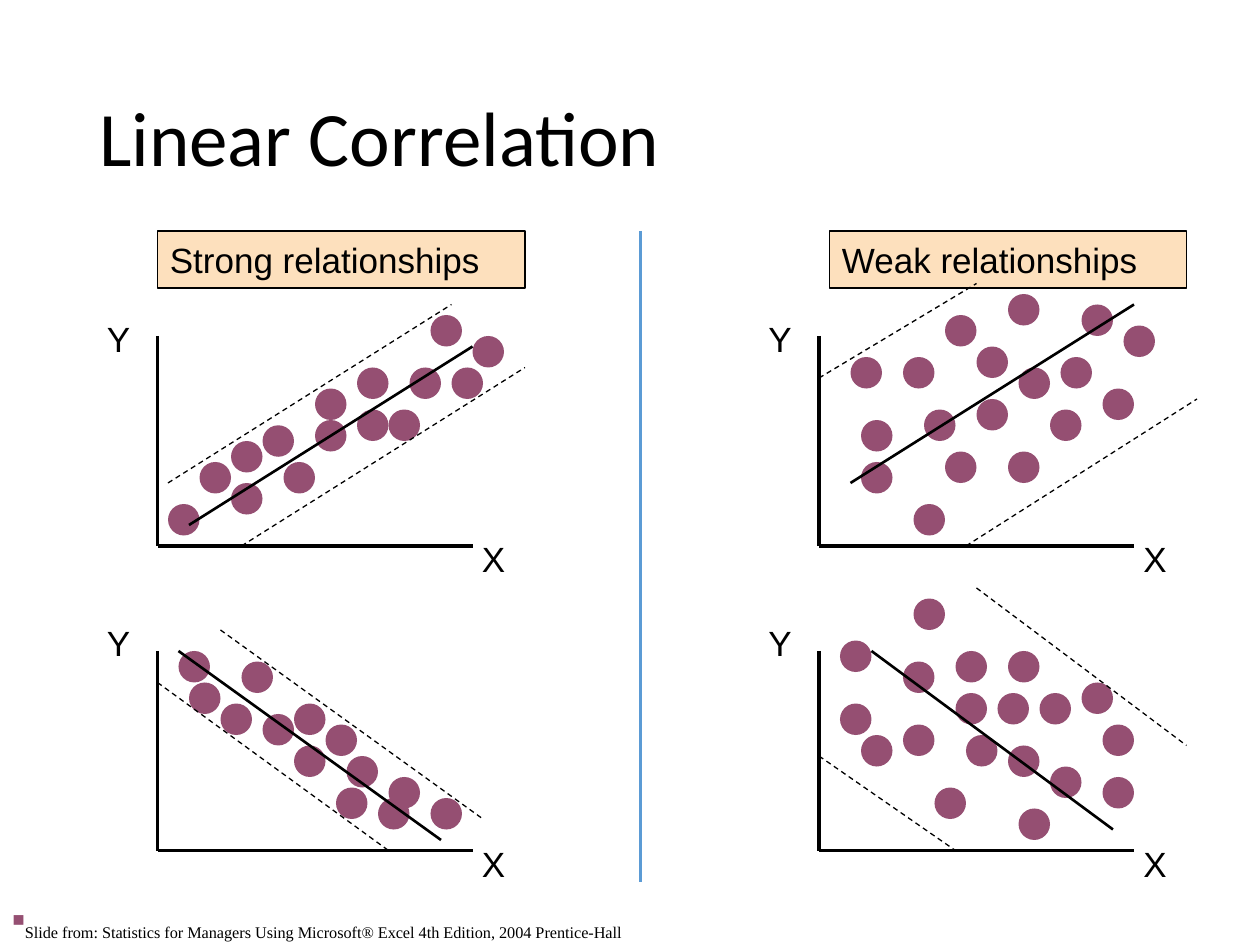
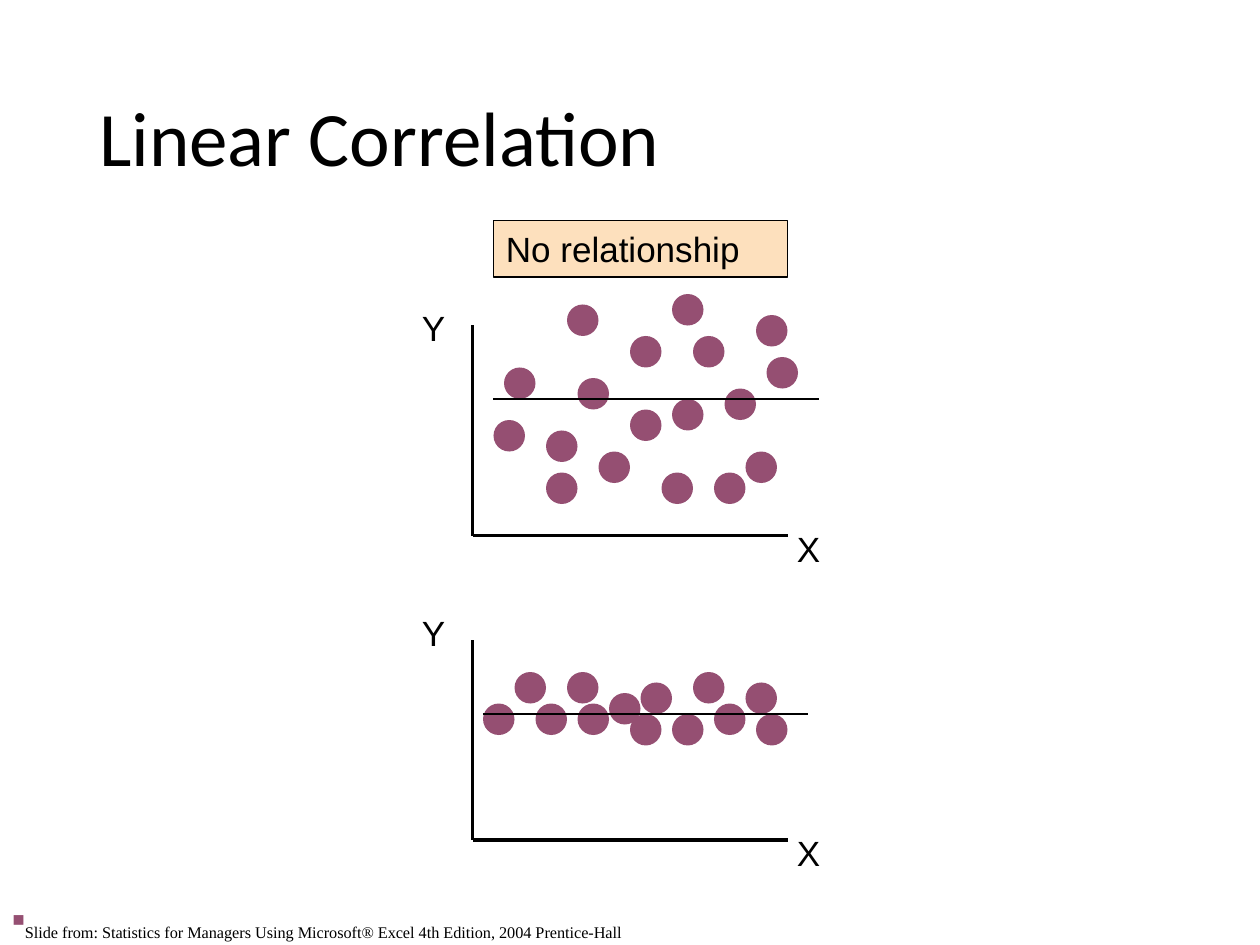
from dataclasses import dataclass
from typing import Optional

from lxml import etree
from pptx import Presentation
from pptx.dml.color import RGBColor
from pptx.enum.dml import MSO_LINE
from pptx.enum.shapes import MSO_CONNECTOR, MSO_SHAPE
from pptx.enum.text import MSO_ANCHOR, MSO_AUTO_SIZE, PP_ALIGN
from pptx.oxml.ns import qn
from pptx.util import Emu, Inches, Pt

LINE, RECT, DOT = MSO_CONNECTOR.STRAIGHT, MSO_SHAPE.RECTANGLE, MSO_SHAPE.OVAL
DASH = MSO_LINE.DASH
LEFT, MIDDLE, NO_FIT = PP_ALIGN.LEFT, MSO_ANCHOR.MIDDLE, MSO_AUTO_SIZE.NONE

BLACK = RGBColor(0x00, 0x00, 0x00)
PLUM = RGBColor(0x95, 0x4F, 0x72)
PEACH = RGBColor(0xFD, 0xE0, 0xBD)
BLUE = RGBColor(0x5B, 0x9B, 0xD5)

# The slide is a grid of 120 columns by 90 rows, so cells are square
WIDTH, HEIGHT = Inches(10), Inches(7.5)
COLUMNS = 120
CELL = WIDTH / COLUMNS
DOT_SIZE = 3
AXIS_WIDTH = 30
HEADING_HEIGHT = 5.4
LABEL_SIZE = (4.7, 5.2)

TITLE = "Linear Correlation"
SOURCE = ("Slide from: Statistics for Managers Using Microsoft® Excel "
          "4th Edition, 2004 Prentice-Hall")

Point = tuple[float, float]
Segment = tuple[float, float, float, float]


@dataclass(frozen=True)
class Heading:
    text: str
    column: float
    row: float
    width: float


@dataclass(frozen=True)
class Plot:
    origin: Point
    axis_height: float
    dots: tuple[Point, ...]
    trend: Segment
    limits: tuple[Segment, ...] = ()


@dataclass(frozen=True)
class SlidePlan:
    headings: tuple[Heading, ...]
    plots: tuple[Plot, ...]
    divider: Optional[Segment] = None


STRONG_UP = Plot(
    (15, 52), 20,
    ((16, 48), (19, 44), (22, 46), (22, 42), (25, 40.5), (27, 44), (30, 40), (30, 37),
     (34, 39), (34, 35), (37, 39), (39, 35), (41, 30), (43, 35), (45, 32)),
    (18, 50, 45, 33), ((16, 46, 43, 29), (23, 52, 50, 35)))
STRONG_DOWN = Plot(
    (15, 81), 19,
    ((17, 62), (18, 65), (21, 67), (23, 63), (25, 68), (28, 67), (28, 71),
     (31, 69), (32, 75), (33, 72), (36, 76), (37, 74), (41, 76)),
    (17, 62, 42, 80), ((21, 60, 46, 78), (15, 65, 37, 81)))
WEAK_UP = Plot(
    (78, 52), 20,
    ((81, 34), (82, 40), (82, 44), (86, 34), (87, 48), (88, 39), (90, 30), (90, 43),
     (93, 33), (93, 38), (96, 28), (96, 43), (97, 35), (100, 39), (101, 34),
     (103, 29), (105, 37), (107, 31)),
    (81, 46, 108, 29), ((78, 36, 93, 27), (92, 52, 114, 38)))
WEAK_DOWN = Plot(
    (78, 81), 19,
    ((80, 61), (80, 67), (82, 70), (86, 63), (86, 69), (87, 57), (89, 75), (91, 62),
     (91, 66), (92, 70), (95, 66), (96, 62), (96, 71), (97, 77), (99, 66),
     (100, 73), (103, 65), (105, 69), (105, 74)),
    (83, 62, 106, 79), ((93, 56, 113, 71), (78, 72, 91, 81)))
NONE_WIDE = Plot(
    (45, 51), 20,
    ((47, 40), (48, 35), (52, 41), (52, 45), (54, 29), (55, 36), (57, 43), (60, 32),
     (60, 39), (63, 45), (64, 28), (64, 38), (66, 32), (68, 45), (69, 37),
     (71, 43), (72, 30), (73, 34)),
    (47, 38, 78, 38))
NONE_FLAT = Plot(
    (45, 80), 19,
    ((46, 67), (49, 64), (51, 67), (54, 64), (55, 67), (58, 66), (60, 68),
     (61, 65), (64, 68), (66, 64), (68, 67), (71, 65), (72, 68)),
    (46, 68, 77, 68))

SLIDES = (
    SlidePlan(
        (Heading("Strong relationships", 15, 22, 35), Heading("Weak relationships", 79, 22, 34)),
        (STRONG_UP, STRONG_DOWN, WEAK_UP, WEAK_DOWN), (61, 22, 61, 84)),
    SlidePlan((Heading("No relationship", 47, 21, 28),), (NONE_WIDE, NONE_FLAT)),
)


def cells(*counts: float) -> list[Emu]:
    """Turn grid counts into lengths."""
    return [Emu(round(n * CELL)) for n in counts]


def write(tf, text: str, size: float = 20, font: str = "Arial", wrap: bool = False):
    """Fill a text frame with one left-aligned paragraph; return its run."""
    tf.word_wrap, tf.auto_size = wrap, NO_FIT
    p = tf.paragraphs[0]
    p.alignment = LEFT
    r = p.add_run()
    r.text = text
    r.font.size, r.font.name, r.font.color.rgb = Pt(size), font, BLACK
    return r


def add_line(slide, segment: Segment, weight: float, color: RGBColor = BLACK,
             dash=None) -> None:
    cxn = slide.shapes.add_connector(LINE, *cells(*segment))
    cxn.line.color.rgb, cxn.line.width = color, Pt(weight)
    if dash is not None:
        cxn.line.dash_style = dash
    etree.SubElement(cxn._element.spPr, qn("a:effectLst"))


def add_filled(slide, kind, box: Segment, fill: RGBColor):
    sp = slide.shapes.add_shape(kind, *cells(*box))
    sp.shadow.inherit = False
    sp.fill.solid()
    sp.fill.fore_color.rgb = fill
    sp.line.fill.background()
    return sp


def add_label(slide, text: str, column: float, row: float) -> None:
    write(slide.shapes.add_textbox(*cells(column, row, *LABEL_SIZE)).text_frame, text)


def add_heading(slide, heading: Heading) -> None:
    box = (heading.column, heading.row, heading.width, HEADING_HEIGHT)
    sp = add_filled(slide, RECT, box, PEACH)
    sp.line.color.rgb, sp.line.width = BLACK, Pt(1)
    sp.text_frame.vertical_anchor = MIDDLE
    write(sp.text_frame, heading.text, wrap=True)


def add_plot(slide, plot: Plot) -> None:
    x, y = plot.origin
    # Axes and their names
    add_line(slide, (x, y - plot.axis_height, x, y), 2)
    add_line(slide, (x, y, x + AXIS_WIDTH, y), 2)
    add_label(slide, "Y", x - 6, y - 22.4)
    add_label(slide, "X", x + 29.7, y - 1.4)
    # Scatter, then the lines over it
    for column, row in plot.dots:
        add_filled(slide, DOT, (column, row, DOT_SIZE, DOT_SIZE), PLUM)
    for limit in plot.limits:
        add_line(slide, limit, 0.75, dash=DASH)
    add_line(slide, plot.trend, 1.5)


def add_title(slide) -> None:
    sp = slide.shapes.title
    sp.left, sp.top, sp.width, sp.height = cells(8.25, 4.8, 103.5, 17.4)
    sp.text_frame.vertical_anchor = MIDDLE
    write(sp.text_frame, TITLE, size=44, font="Calibri", wrap=True)
    sp.text_frame.paragraphs[0].line_spacing = 0.9


def add_source(slide) -> None:
    tf = slide.shapes.add_textbox(*cells(0, 85.5, 103, 4.4)).text_frame
    r = write(tf, SOURCE, size=16, font="Times New Roman")
    r.font._element.set("baseline", "-25000")
    # Small square bullet
    pPr = tf.paragraphs[0]._p.get_or_add_pPr()
    color = etree.SubElement(pPr, qn("a:buClr"))
    etree.SubElement(color, qn("a:srgbClr"), val=str(PLUM))
    etree.SubElement(pPr, qn("a:buSzPct"), val="60000")
    etree.SubElement(pPr, qn("a:buChar"), char="■")


def main() -> None:
    prs = Presentation()
    prs.slide_width, prs.slide_height = WIDTH, HEIGHT
    title_only = prs.slide_layouts[5]
    for plan in SLIDES:
        slide = prs.slides.add_slide(title_only)
        add_title(slide)
        for heading in plan.headings:
            add_heading(slide, heading)
        if plan.divider:
            add_line(slide, plan.divider, 2.25, BLUE)
        for plot in plan.plots:
            add_plot(slide, plot)
        add_source(slide)
    prs.save("out.pptx")


if __name__ == "__main__":
    main()
